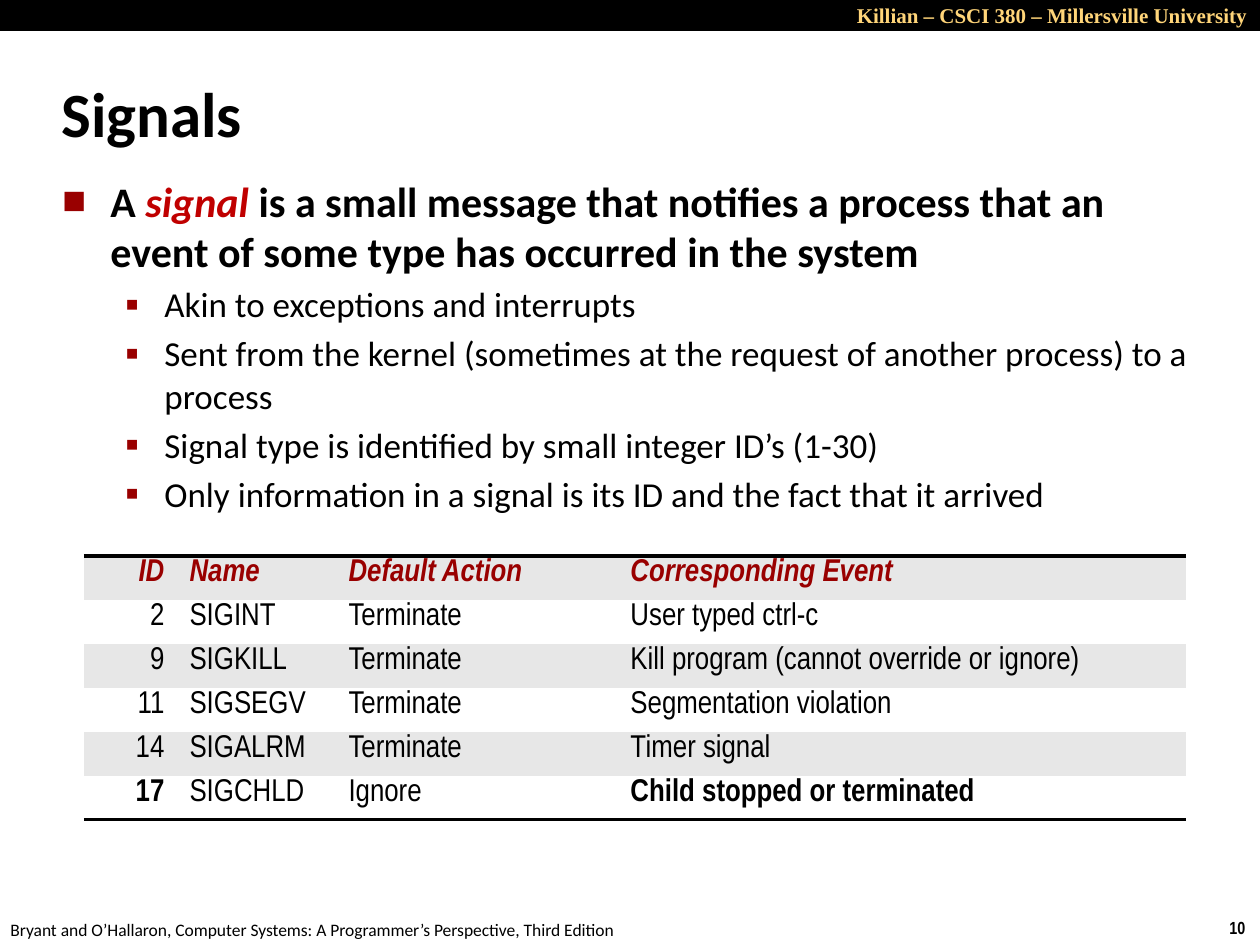
import pptx
import pptx.util
import pptx.dml.color
import pptx.enum.shapes
import pptx.enum.text
import pptx.oxml
import pptx.oxml.ns

PX = 914400 // 126
ALIGN = pptx.enum.text.PP_ALIGN
ANCHOR = pptx.enum.text.MSO_ANCHOR
COLORS = {"black": "000000", "white": "FFFFFF", "gold": "FFD579",
          "red": "C00000", "maroon": "990000", "band": "E7E7E7"}
NARROW = "Arial Narrow"

LEAD = ["A ", "signal",
        " is a small message that notifies a process that an event of some type"
        " has occurred in the system"]
POINTS = [
    "Akin to exceptions and interrupts",
    "Sent from the kernel (sometimes at the request of another process) to a process",
    "Signal type is identified by small integer ID’s (1-30)",
    "Only information in a signal is its ID and the fact that it arrived",
]
COLS = [93, 159, 282, 568]
ROW = 44
ROWS = [
    ["ID", "Name", "Default Action", "Corresponding Event"],
    ["2", "SIGINT", "Terminate", "User typed ctrl-c"],
    ["9", "SIGKILL", "Terminate", "Kill program (cannot override or ignore)"],
    ["11", "SIGSEGV", "Terminate", "Segmentation violation"],
    ["14", "SIGALRM", "Terminate", "Timer signal"],
    ["17", "SIGCHLD", "Ignore", "Child stopped or terminated"],
]
STRONG = {"17", "Child stopped or terminated"}


def scale(*sizes):
    return [size * PX for size in sizes]


def rgb(name):
    return pptx.dml.color.RGBColor.from_string(COLORS[name])


def style(run, size, face="Calibri", color="black", bold=False, italic=False):
    font = run.font
    font.size = pptx.util.Pt(size)
    font.name = face
    font.color.rgb = rgb(color)
    font.bold = bold
    font.italic = italic


def add_xml(parent, text):
    tag, rest = text.split(" ", 1)
    space = pptx.oxml.ns.nsdecls("a")
    parent.append(pptx.oxml.parse_xml(f"<a:{tag} {space} {rest}"))


def add_bar(slide):
    bar = slide.shapes.add_shape(
        pptx.enum.shapes.MSO_SHAPE.RECTANGLE, *scale(0, 0, 1260, 31))
    bar.shadow.inherit = False
    bar.fill.solid()
    bar.fill.fore_color.rgb = rgb("black")
    bar.line.fill.background()


def add_label(slide, text, box, size, align=ALIGN.LEFT, wrap=False, **look):
    frame = slide.shapes.add_textbox(*scale(*box)).text_frame
    frame.word_wrap = wrap
    frame.text = text
    para = frame.paragraphs[0]
    para.alignment = align
    style(para.runs[0], size, **look)


def set_title(slide, text):
    title = slide.shapes.title
    title.left, title.top, title.width, title.height = scale(49, 60, 1046, 105)
    frame = title.text_frame
    frame.text = text
    frame.vertical_anchor = ANCHOR.MIDDLE
    para = frame.paragraphs[0]
    para.alignment = ALIGN.LEFT
    style(para.runs[0], 36, bold=True)


def set_bullet(para, mark, size, left, hang):
    props = para._p.get_or_add_pPr()
    props.set("marL", str(left * PX))
    props.set("indent", str(-hang * PX))
    add_xml(props, f'buClr ><a:srgbClr val="{COLORS["maroon"]}"/></a:buClr>')
    add_xml(props, f'buSzPct val="{size * 1000}"/>')
    add_xml(props, 'buFont typeface="Calibri"/>')
    add_xml(props, f'buChar char="{mark}"/>')


def add_body(slide):
    frame = slide.shapes.add_textbox(*scale(50, 169, 1157, 378)).text_frame
    frame.word_wrap = True
    para = frame.paragraphs[0]
    set_bullet(para, "■", 60, 48, 48)
    for part in LEAD:
        run = para.add_run()
        run.text = part
        key = part == "signal"
        style(run, 24, color="red" if key else "black", bold=True, italic=key)
    for point in POINTS:
        para = frame.add_paragraph()
        para.text = point
        para.level = 1
        para.space_before = pptx.util.Pt(4)
        set_bullet(para, "▪", 110, 102, 39)
        style(para.runs[0], 20)


def set_edge(cell, side):
    """Draw a black rule on one side of a cell, ahead of its fill."""
    props = cell._tc.get_or_add_tcPr()
    add_xml(props, f'{side} w="25400"><a:solidFill><a:srgbClr val="{COLORS["black"]}"/>'
                   f'</a:solidFill></a:{side}>')
    props.insert(0, props[-1])


def fill_cell(cell, text, row, col):
    head = row == 0
    cell.fill.solid()
    cell.fill.fore_color.rgb = rgb("white" if row % 2 else "band")
    cell.margin_top, cell.margin_bottom = scale(3, 0)
    cell.text = text
    para = cell.text_frame.paragraphs[0]
    para.line_spacing = 0.95
    para.alignment = ALIGN.LEFT if col else ALIGN.RIGHT
    style(para.runs[0], 18, NARROW, "maroon" if head else "black",
          head or text in STRONG, head)
    if head:
        set_edge(cell, "lnT")
    if row == len(ROWS) - 1:
        set_edge(cell, "lnB")


def add_grid(slide):
    shape = slide.shapes.add_table(
        len(ROWS), len(COLS), *scale(84, 556, sum(COLS), ROW * len(ROWS)))
    table = shape.table
    table.first_row = table.horz_banding = False
    # The "No Style, No Grid" table style
    style_id = shape._element.find(".//" + pptx.oxml.ns.qn("a:tableStyleId"))
    style_id.text = "{2D5ABB26-0587-4C30-8999-92F81FD0307C}"
    for column, width in zip(table.columns, COLS):
        column.width = width * PX
    for row, texts in enumerate(ROWS):
        table.rows[row].height = ROW * PX
        for col, text in enumerate(texts):
            fill_cell(table.cell(row, col), text, row, col)


def main():
    deck = pptx.Presentation()
    deck.slide_width, deck.slide_height = scale(1260, 945)
    slide = deck.slides.add_slide(deck.slide_layouts[5])
    add_bar(slide)
    add_label(slide, "Killian – CSCI 380 – Millersville University",
              (829, -4, 431, 38), 12, ALIGN.RIGHT, True,
              face="Times New Roman", color="gold", bold=True)
    add_label(slide, "10", (1217, 911, 43, 34), 10, face=NARROW, bold=True)
    add_label(slide, "Bryant and O’Hallaron, Computer Systems: "
              "A Programmer’s Perspective, Third Edition", (-2, 913, 640, 34), 10)
    set_title(slide, "Signals")
    add_body(slide)
    add_grid(slide)
    deck.save("out.pptx")


if __name__ == "__main__":
    main()
